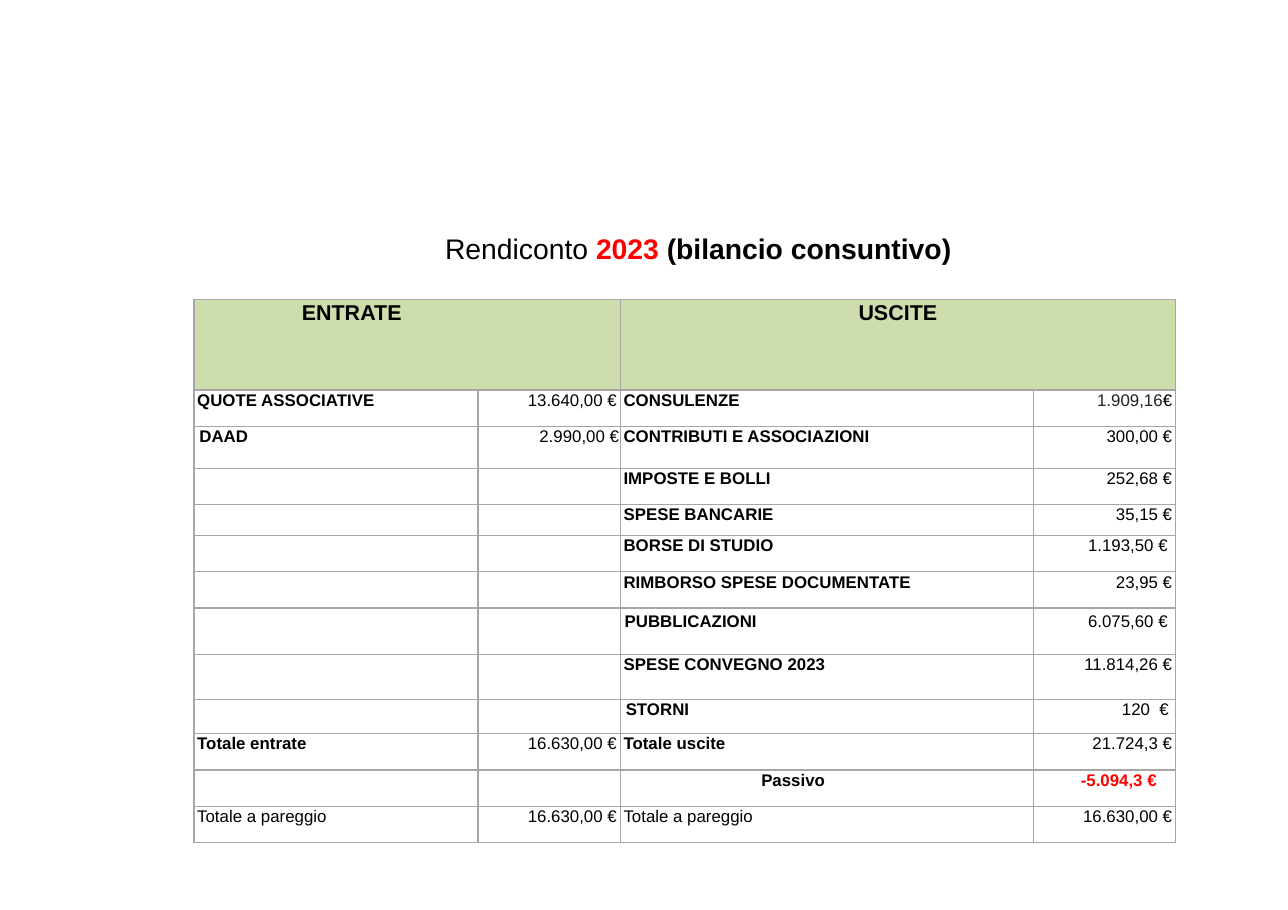
from lxml import etree
from pptx import Presentation
from pptx.dml.color import RGBColor
from pptx.enum.text import PP_ALIGN as Align
from pptx.oxml.ns import qn
from pptx.util import Inches, Pt

FONT = "Arial"
BLACK, RED, DARK = "000000", "FF0000", "202124"
GREEN, GREY = "CDDDAC", "A6A6A6"
COLUMNS = [2.58, 1.29, 3.75, 1.29]
HEADER_HEIGHT = 0.82
INSET = 0.03

# height, income label, income amount, expense label, expense amount
ROWS = [
    (0.33, "QUOTE ASSOCIATIVE", "13.640,00 €", "CONSULENZE", "1.909,16€"),
    (0.38, "DAAD", "2.990,00 €", "CONTRIBUTI E ASSOCIAZIONI", "300,00 €"),
    (0.33, "", "", "IMPOSTE E BOLLI", "252,68 €"),
    (0.28, "", "", "SPESE BANCARIE", "35,15 €"),
    (0.33, "", "", "BORSE DI STUDIO", "1.193,50 €"),
    (0.33, "", "", "RIMBORSO SPESE DOCUMENTATE", "23,95 €"),
    (0.42, "", "", "PUBBLICAZIONI", "6.075,60 €"),
    (0.41, "", "", "SPESE CONVEGNO 2023", "11.814,26 €"),
    (0.31, "", "", "STORNI", "120  €"),
    (0.33, "Totale entrate", "16.630,00 €", "Totale uscite", "21.724,3 €"),
    (0.33, "", "", "Passivo", "-5.094,3 €"),
    (0.33, "Totale a pareggio", "16.630,00 €", "Totale a pareggio", "16.630,00 €"),
]
# Text whose distance from its aligned edge differs from INSET
INSETS = {"DAAD": 0.05, "2.990,00 €": 0.01, "1.193,50 €": 0.07,
          "PUBBLICAZIONI": 0.04, "6.075,60 €": 0.07, "STORNI": 0.05,
          "120  €": 0.06, "Passivo": 1.28, "-5.094,3 €": 0.17}
LOWERED = {"PUBBLICAZIONI", "6.075,60 €"}


def rgb(color):
    return RGBColor.from_string(color)


def add_run(p, text, size, color=BLACK, bold=False):
    r = p.add_run()
    r.text = text
    r.font.name = FONT
    r.font.size = Pt(size)
    r.font.bold = bold
    r.font.color.rgb = rgb(color)


def add_title(slide):
    sp = slide.shapes.add_textbox(Inches(4.04), Inches(2.09), Inches(5.56), Inches(0.32))
    tf = sp.text_frame
    tf.word_wrap = True
    tf.margin_left = tf.margin_right = tf.margin_bottom = 0
    tf.margin_top = Inches(0.01)
    p = tf.paragraphs[0]
    add_run(p, "Rendiconto ", 18.5)
    add_run(p, "2023 ", 18.5, RED, True)
    add_run(p, "(bilancio consuntivo)", 18.5, bold=True)


def style_cell(cell, fill=None, left=0.01, right=0.01, top=0.01):
    """Set the insets, the grey borders and the fill."""
    cell.margin_left, cell.margin_right = Inches(left), Inches(right)
    cell.margin_top, cell.margin_bottom = Inches(top), 0
    tcPr = cell._tc.get_or_add_tcPr()
    for side in ("a:lnL", "a:lnR", "a:lnT", "a:lnB"):
        ln = etree.SubElement(tcPr, qn(side), w=str(Pt(1)))
        solid = etree.SubElement(ln, qn("a:solidFill"))
        etree.SubElement(solid, qn("a:srgbClr"), val=GREY)
    if fill:
        cell.fill.solid()
        cell.fill.fore_color.rgb = rgb(fill)
    else:
        cell.fill.background()


def fill_header(table, column, text, align, left):
    cell = table.cell(0, column)
    neighbour = table.cell(0, column + 1)
    cell.merge(neighbour)
    style_cell(cell, GREEN, left)
    style_cell(neighbour, GREEN)
    p = cell.text_frame.paragraphs[0]
    p.alignment = align
    add_run(p, text, 14, bold=True)


def fill_entry(cell, text, is_amount):
    inset = INSETS.get(text, INSET)
    top = 0.04 if text in LOWERED else 0.01
    p = cell.text_frame.paragraphs[0]
    if is_amount:
        style_cell(cell, right=inset, top=top)
        p.alignment = Align.RIGHT
    else:
        style_cell(cell, left=inset, top=top)
    if not text:
        # keeps an empty cell from stretching its row
        etree.SubElement(p._p, qn("a:endParaRPr"), sz="1100")
    elif text == "1.909,16€":
        add_run(p, text[:-1], 11, DARK)
        add_run(p, "€", 11)
    elif text.startswith("-"):
        add_run(p, text, 11, RED, True)
    else:
        add_run(p, text, 11, bold=not is_amount and text != "Totale a pareggio")


def add_balance_table(slide):
    heights = [HEADER_HEIGHT] + [row[0] for row in ROWS]
    frame = slide.shapes.add_table(len(heights), len(COLUMNS), Inches(1.76), Inches(2.72),
                                   Inches(sum(COLUMNS)), Inches(sum(heights)))
    table = frame.table
    table.first_row = table.horz_banding = False
    for column, width in zip(table.columns, COLUMNS):
        column.width = Inches(width)
    for row, height in zip(table.rows, heights):
        row.height = Inches(height)
    fill_header(table, 0, "ENTRATE", Align.LEFT, 0.98)
    fill_header(table, 2, "USCITE", Align.CENTER, 0.01)
    for i, (_, *texts) in enumerate(ROWS, start=1):
        for j, text in enumerate(texts):
            fill_entry(table.cell(i, j), text, is_amount=j % 2 == 1)


def main():
    prs = Presentation()
    prs.slide_width, prs.slide_height = Inches(11.69), Inches(8.26)
    slide = prs.slides.add_slide(prs.slide_layouts[6])
    add_title(slide)
    add_balance_table(slide)
    prs.save("out.pptx")


if __name__ == "__main__":
    main()
